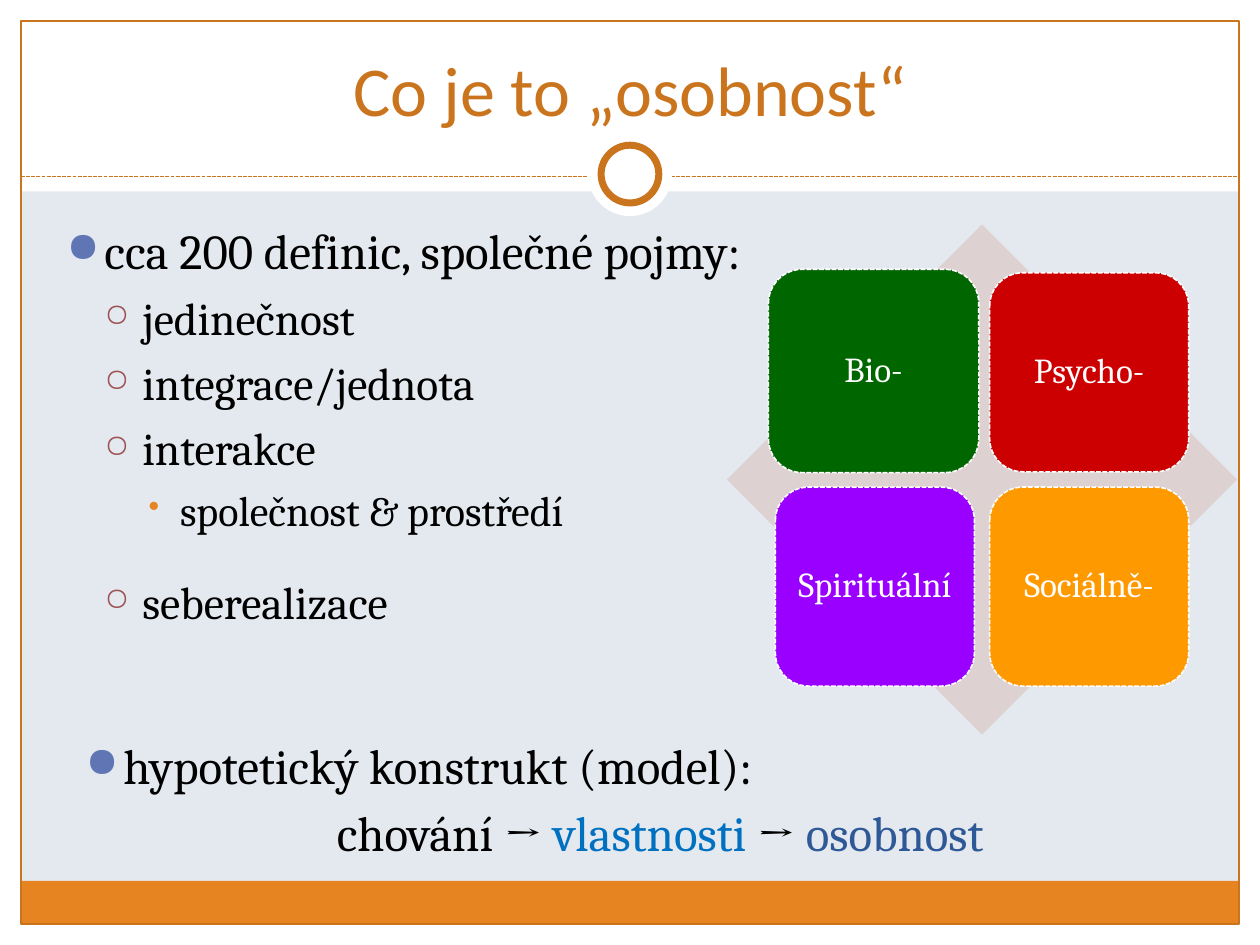
from lxml import etree
from pptx import Presentation
from pptx.dml.color import RGBColor
from pptx.enum.dml import MSO_LINE
from pptx.enum.shapes import MSO_CONNECTOR, MSO_SHAPE
from pptx.enum.text import MSO_ANCHOR, PP_ALIGN
from pptx.oxml.ns import qn
from pptx.util import Pt

RECTANGLE = MSO_SHAPE.RECTANGLE
ROUNDED = MSO_SHAPE.ROUNDED_RECTANGLE
DIAMOND = MSO_SHAPE.DIAMOND
OVAL = MSO_SHAPE.OVAL
STRAIGHT = MSO_CONNECTOR.STRAIGHT
DASHED = MSO_LINE.SQUARE_DOT
CENTER = PP_ALIGN.CENTER
MIDDLE, BOTTOM = MSO_ANCHOR.MIDDLE, MSO_ANCHOR.BOTTOM

WHITE = RGBColor(0xFF, 0xFF, 0xFF)
BLACK = RGBColor(0x00, 0x00, 0x00)
PALE_BLUE = RGBColor(0xE4, 0xE9, 0xEF)
ORANGE = RGBColor(0xE6, 0x84, 0x22)
RUST = RGBColor(0xCB, 0x74, 0x1E)
INDIGO = RGBColor(0x60, 0x76, 0xB4)
MAROON = RGBColor(0x9C, 0x52, 0x52)
PINK = RGBColor(0xDE, 0xD1, 0xD1)
GREEN = RGBColor(0x00, 0x66, 0x00)
RED = RGBColor(0xCC, 0x00, 0x00)
VIOLET = RGBColor(0x99, 0x00, 0xFF)
AMBER = RGBColor(0xFF, 0x99, 0x00)
BLUE = RGBColor(0x00, 0x70, 0xC0)
NAVY = RGBColor(0x2F, 0x58, 0x97)

LEVELS = [
    {"size": 28, "margin": 21.6, "hang": 21.6, "bullet": ("●", INDIGO, 85)},
    {"size": 26, "margin": 43.2, "hang": 21.6, "bullet": ("○", MAROON, 70)},
    {"size": 24, "margin": 64.8, "hang": 18, "bullet": ("•", ORANGE, 75)},
]
SPACE_RATIO = 0.235
DEFINITIONS = [
    (0, "cca 200 definic, společné pojmy:", None),
    (1, "jedinečnost", None),
    (1, "integrace/jednota", None),
    (1, "interakce", None),
    (2, "společnost & prostředí", None),
    (1, "seberealizace", 22),
]
TILES = [
    ("Bio-", GREEN, (-4, -2, 6.5, 2.5)),
    ("Psycho-", RED, (0, 0, 0, 0)),
    ("Spirituální", VIOLET, (0, 0, 0, 0)),
    ("Sociálně-", AMBER, (0, 0, 0, 0)),
]


def add_box(page, kind, box, fill=None, line=None, width=0.75):
    shape = page.shapes.add_shape(kind, *map(Pt, box))
    shape.shadow.inherit = False
    if fill is None:
        shape.fill.background()
    else:
        shape.fill.solid()
        shape.fill.fore_color.rgb = fill
    if line is None:
        shape.line.fill.background()
    else:
        shape.line.color.rgb = line
        shape.line.width = Pt(width)
    return shape


def add_text_frame(page, box):
    frame = page.shapes.add_textbox(*map(Pt, box)).text_frame
    frame.word_wrap = True
    return frame


def format_span(span, size, color, font="Cambria"):
    span.font.size = Pt(size)
    span.font.name = font
    span.font.color.rgb = color


def format_level(para, level, space=None):
    style = LEVELS[level]
    para.level = level
    para.space_before = Pt(space or round(style["size"] * SPACE_RATIO, 1))
    properties = para._p.get_or_add_pPr()
    properties.set("marL", str(Pt(style["margin"])))
    properties.set("indent", str(-Pt(style["hang"])))
    symbol, color, percent = style["bullet"]
    holder = etree.SubElement(properties, qn("a:buClr"))
    etree.SubElement(holder, qn("a:srgbClr"), val=str(color))
    etree.SubElement(properties, qn("a:buSzPct"), val=str(percent * 1000))
    etree.SubElement(properties, qn("a:buChar"), char=symbol)


def add_frame(page, box):
    left, top, width, height = box
    edge, header, footer = 12, 109.4, 24.6
    for strip in [
        (left, top + height - edge, width, edge),
        (left, top, width, header),
        (left, top, edge, height),
        (left + width - edge, top, edge, height),
    ]:
        add_box(page, RECTANGLE, strip, WHITE)
    inner_width, bottom = width - 2 * edge, top + height - edge
    add_box(page, RECTANGLE, (left + edge, bottom - footer, inner_width, footer), ORANGE)
    add_box(page, RECTANGLE, (left + edge, top + edge, inner_width, height - 2 * edge), None, RUST)

    rule_y = Pt(top + 100.8)
    rule = page.shapes.add_connector(STRAIGHT, Pt(left + edge), rule_y, Pt(left + width - edge), rule_y)
    rule.line.color.rgb = RUST
    rule.line.width = Pt(0.75)
    rule.line.dash_style = DASHED
    etree.SubElement(rule._element.spPr, qn("a:effectLst"))

    center_x, center_y = left + width / 2, top + 99.5
    for diameter, line in [(48, None), (33, RUST)]:
        circle = (center_x - diameter / 2, center_y - diameter / 2, diameter, diameter)
        add_box(page, OVAL, circle, WHITE, line, 4)


def add_title(page, box):
    frame = add_text_frame(page, box)
    frame.vertical_anchor = BOTTOM
    frame.text = "Co je to „osobnost“"
    para = frame.paragraphs[0]
    para.alignment = CENTER
    format_span(para.runs[0], 40, RUST, "Calibri")


def add_definitions(page, box):
    frame = add_text_frame(page, box)
    frame.text = "\n".join(text for _, text, _ in DEFINITIONS)
    for para, (level, _, space) in zip(frame.paragraphs, DEFINITIONS):
        format_level(para, level, space)
        format_span(para.runs[0], LEVELS[level]["size"], BLACK)


def add_matrix(page, box):
    left, top, width, _ = box
    add_box(page, DIAMOND, box, PINK)
    side, pitch = width * 0.39, width * 0.42
    margin = (width - side - pitch) / 2
    for index, (label, color, growth) in enumerate(TILES):
        row, column = divmod(index, 2)
        cell = (left + margin + column * pitch, top + margin + row * pitch, side, side)
        place = [start + extra for start, extra in zip(cell, growth)]
        tile = add_box(page, ROUNDED, place, color, WHITE, 0.9)
        tile.line.dash_style = DASHED
        frame = tile.text_frame
        frame.margin_left = frame.margin_right = Pt(5.4)
        frame.word_wrap = True
        frame.vertical_anchor = MIDDLE
        frame.text = label
        para = frame.paragraphs[0]
        para.alignment = CENTER
        para.line_spacing = 0.9
        format_span(para.runs[0], 20, WHITE)


def add_construct(page, box):
    frame = add_text_frame(page, box)
    frame.text = "hypotetický konstrukt (model):"
    heading = frame.paragraphs[0]
    heading.line_spacing = 1.14
    format_level(heading, 0)
    format_span(heading.runs[0], 28, BLACK)

    chain = frame.add_paragraph()
    chain.line_spacing = 1.14
    chain._p.get_or_add_pPr().set("marL", str(Pt(143.6)))
    for text, color in [("chování → ", BLACK), ("vlastnosti", BLUE), (" → ", BLACK), ("osobnost", NAVY)]:
        span = chain.add_run()
        span.text = text
        format_span(span, 28, color)


def main():
    deck = Presentation()
    deck.slide_width, deck.slide_height = Pt(720), Pt(540)
    page = deck.slides.add_slide(deck.slide_layouts[6])
    page.background.fill.solid()
    page.background.fill.fore_color.rgb = PALE_BLUE
    add_frame(page, (0, 0, 720, 540))
    add_title(page, (24, 18, 672, 60))
    add_definitions(page, (31, 122.4, 430.6, 260.6))
    add_matrix(page, (415.4, 128.2, 291.6, 291.6))
    add_construct(page, (41.8, 411.8, 664.6, 108))
    deck.save("out.pptx")


if __name__ == "__main__":
    main()
